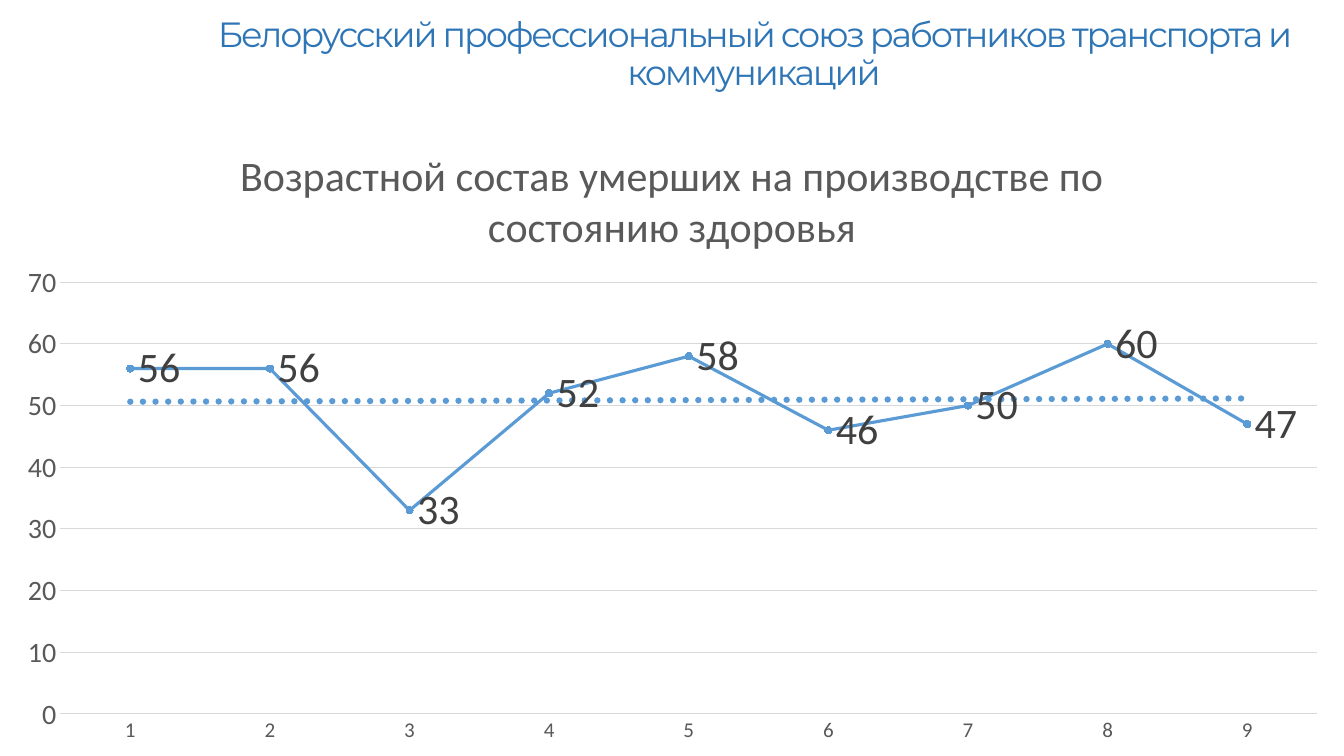
from dataclasses import dataclass

from lxml.etree import fromstring
from pptx import Presentation
from pptx.chart.axis import _BaseAxis as Axis
from pptx.chart.chart import Chart
from pptx.chart.data import CategoryChartData
from pptx.dml.color import RGBColor
from pptx.enum.chart import XL_CHART_TYPE as ChartType
from pptx.enum.chart import XL_LABEL_POSITION as LabelPosition
from pptx.enum.chart import XL_MARKER_STYLE as MarkerStyle
from pptx.enum.chart import XL_TICK_MARK as TickMark
from pptx.enum.text import MSO_ANCHOR as Anchor
from pptx.enum.text import MSO_AUTO_SIZE as AutoSize
from pptx.enum.text import PP_ALIGN as Align
from pptx.util import Inches, Pt

CHART_NS = "http://schemas.openxmlformats.org/drawingml/2006/chart"
DRAWING_NS = "http://schemas.openxmlformats.org/drawingml/2006/main"
NAMESPACES = f'xmlns:c="{CHART_NS}" xmlns:a="{DRAWING_NS}"'

UNION = "Белорусский профессиональный союз работников транспорта и коммуникаций"
HEADING = "Возрастной состав умерших на производстве по состоянию здоровья"
AGES = (56, 56, 33, 52, 58, 46, 50, 60, 47)

BLUE, GREY, PALE = "5B9BD5", "595959", "D9D9D9"


@dataclass(frozen=True)
class Area:
    """A rectangle given as shares of the space that holds it."""

    left: float
    top: float
    width: float
    height: float


@dataclass(frozen=True)
class AxisStyle:
    """Text size and visibility of the line and grid of an axis."""

    size: float
    line: bool
    grid: bool


UNION_AREA = Area(0.122, 0.023, 0.878, 0.101)
CHART_AREA = Area(0, 0.16, 1, 0.84)
PLOT_AREA = Area(0.045, 0.254, 0.935, 0.68)
CATEGORY_STYLE = AxisStyle(15, line=True, grid=False)
VALUE_STYLE = AxisStyle(20, line=False, grid=True)


def color(value: str) -> RGBColor:
    """Turn a hex string into a colour."""
    return RGBColor.from_string(value)


def style_font(font, size: float, hex_color: str, face: str = "Calibri") -> None:
    """Set size, colour and typeface of a font."""
    font.size, font.name, font.bold = Pt(size), face, False
    font.color.rgb = color(hex_color)


def style_line(line, hex_color: str, width: float) -> None:
    """Set colour and width of a line."""
    line.color.rgb = color(hex_color)
    line.width = Pt(width)


def place(prs, area: Area) -> tuple[int, ...]:
    """Convert shares of the slide into lengths."""
    return (
        int(prs.slide_width * area.left),
        int(prs.slide_height * area.top),
        int(prs.slide_width * area.width),
        int(prs.slide_height * area.height),
    )


def write_union(prs, union) -> None:
    """Write the name of the union in the title placeholder."""
    union.left, union.top, union.width, union.height = place(prs, UNION_AREA)
    frame = union.text_frame
    frame.text = UNION
    frame.word_wrap = True
    frame.auto_size = AutoSize.SHAPE_TO_FIT_TEXT
    frame.vertical_anchor = Anchor.TOP
    frame.margin_left = frame.margin_top = frame.margin_right = frame.margin_bottom = 0
    paragraph = frame.paragraphs[0]
    paragraph.alignment, paragraph.line_spacing = Align.CENTER, 0.9
    style_font(paragraph.runs[0].font, 25, "2E75B6", "Montserrat")
    paragraph.runs[0].font._element.set("spc", "-150")


def style_axis(axis: Axis, style: AxisStyle) -> None:
    """Format one axis of the chart."""
    axis.major_tick_mark = axis.minor_tick_mark = TickMark.NONE
    axis.has_major_gridlines = style.grid
    style_font(axis.tick_labels.font, style.size, GREY)
    if style.line:
        style_line(axis.format.line, PALE, 0.75)
    else:
        axis.format.line.fill.background()
    if style.grid:
        style_line(axis.major_gridlines.format.line, PALE, 0.75)


def style_ages(ages) -> None:
    """Format the line of ages with its markers and values."""
    ages.smooth = False
    style_line(ages.format.line, BLUE, 2.25)
    ages.marker.style, ages.marker.size = MarkerStyle.CIRCLE, 5
    ages.marker.format.fill.solid()
    ages.marker.format.fill.fore_color.rgb = color(BLUE)
    style_line(ages.marker.format.line, BLUE, 0.75)
    labels = ages.data_labels
    labels.show_value, labels.position = True, LabelPosition.RIGHT
    style_font(labels.font, 30, "404040")


def add_trend(ages) -> None:
    """Add a dotted linear trend to the ages."""
    trend = fromstring(
        f'<c:trendline {NAMESPACES}><c:spPr><a:ln w="{Pt(4.5)}" cap="rnd">'
        f'<a:solidFill><a:srgbClr val="{BLUE}"/></a:solidFill>'
        '<a:prstDash val="sysDot"/></a:ln></c:spPr>'
        '<c:trendlineType val="linear"/><c:dispRSqr val="0"/>'
        '<c:dispEq val="0"/></c:trendline>'
    )
    ages._element.find(f"{{{CHART_NS}}}cat").addprevious(trend)


def fix_plot(chart: Chart, area: Area) -> None:
    """Fix the inner plot area as shares of the chart."""
    plot_area = chart._chartSpace.chart.plotArea
    for former in plot_area.findall(f"{{{CHART_NS}}}layout"):
        plot_area.remove(former)
    shares = {"x": area.left, "y": area.top, "w": area.width, "h": area.height}
    modes = "".join(f'<c:{key}Mode val="edge"/>' for key in "xy")
    sizes = "".join(f'<c:{key} val="{share}"/>' for key, share in shares.items())
    layout = fromstring(
        f"<c:layout {NAMESPACES}><c:manualLayout>"
        f'<c:layoutTarget val="inner"/>{modes}{sizes}'
        "</c:manualLayout></c:layout>"
    )
    plot_area.insert(0, layout)


def add_age_chart(prs, slide) -> None:
    """Add the line chart of ages with its heading."""
    data = CategoryChartData()
    data.categories = [str(case) for case in range(1, len(AGES) + 1)]
    data.add_series("Series 1", AGES)
    chart = slide.shapes.add_chart(
        ChartType.LINE_MARKERS, *place(prs, CHART_AREA), data
    ).chart
    style_font(chart.font, 10, "000000")
    chart.has_legend = False
    chart.has_title = True
    heading = chart.chart_title.text_frame
    heading.text = HEADING
    style_font(heading.paragraphs[0].runs[0].font, 30, GREY)
    chart.chart_title.include_in_layout = False
    style_axis(chart.category_axis, CATEGORY_STYLE)
    style_axis(chart.value_axis, VALUE_STYLE)
    chart.value_axis.minimum_scale, chart.value_axis.maximum_scale = 0, 70
    chart.value_axis.major_unit = 10
    chart.plots[0].vary_by_categories = False
    ages = chart.plots[0].series[0]
    style_ages(ages)
    add_trend(ages)
    fix_plot(chart, PLOT_AREA)


def main() -> None:
    """Build the slide and save it."""
    prs = Presentation()
    prs.slide_width, prs.slide_height = Inches(13.33), Inches(7.5)
    slide = prs.slides.add_slide(prs.slide_layouts[5])
    write_union(prs, slide.shapes.title)
    add_age_chart(prs, slide)
    prs.save("out.pptx")


if __name__ == "__main__":
    main()
